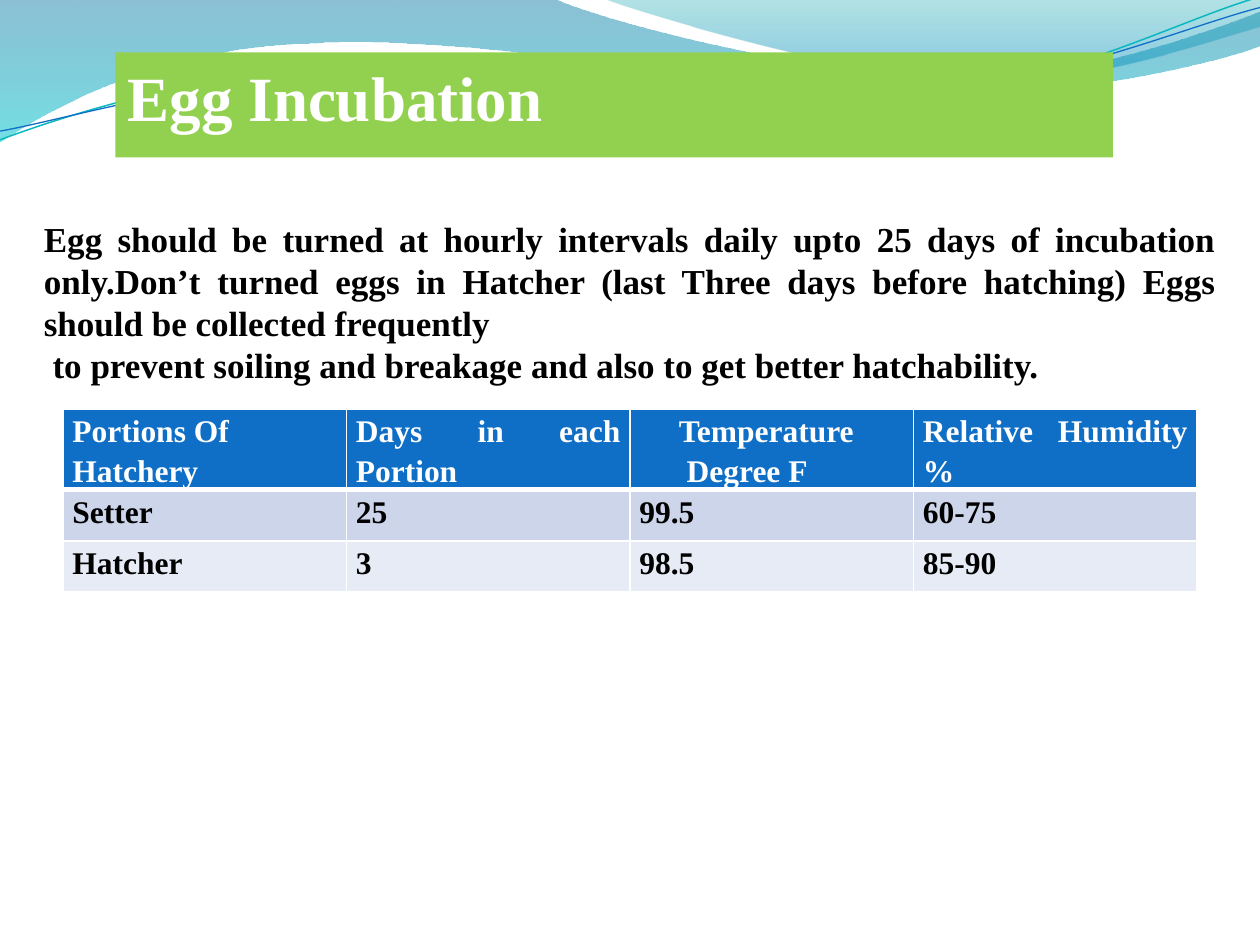
from lxml import etree
from pptx import Presentation
from pptx.dml.color import RGBColor
from pptx.enum.shapes import MSO_SHAPE
from pptx.enum.text import MSO_ANCHOR, PP_ALIGN
from pptx.oxml.ns import qn
from pptx.util import Pt

FONT = "Times New Roman"

# Wave outlines in points: pairs are corners, sextuples are Bezier curves
BAND = [(0, 0), (316.8, -0.7), (342.7, 12.2, 478.1, 45.4, 545.8, 45.4),
        (614.2, 45.4, 689.8, 18.7, 720, 6.5), (720.7, 25.9),
        (707.8, 31.7, 626.4, 54.7, 537.1, 54), (447.8, 54, 275, 20.2, 185, 24.5),
        (92.9, 25.9, 33.1, 59.8, -0.7, 81.4)]
CREST = [(344.9, -0.7), (366.5, 7.9, 491, 44.6, 553.7, 46.8),
         (616.3, 49.7, 691.9, 23, 720, 15.1), (720, 0)]
TEAL_LINE = [(0, 79.9), (34.6, 67, 113.8, 41, 199.4, 37.4),
             (284.4, 33.8, 427, 64.1, 513.4, 57.6),
             (599.8, 51.1, 675.4, 10.8, 718.6, -1.4)]
BLUE_LINE = [(0, 74.9), (33.8, 69.1, 118.1, 43.9, 203.8, 40.3),
             (290.2, 36.7, 429.8, 60.5, 516.2, 54),
             (601.9, 48.2, 677.5, 15.1, 720, 4.3)]

BODY = ("Egg should be turned at hourly intervals daily upto 25 days of incubation "
        "only.Don’t turned eggs in Hatcher (last Three days before hatching) Eggs "
        "should be collected frequently\n"
        " to prevent soiling and breakage and also to get better hatchability.")
ROWS = [["Portions Of\nHatchery", "Days in each Portion",
         "Temperature\nDegree F", "Relative Humidity %"],
        ["Setter", "25", "99.5", "60-75"],
        ["Hatcher", "3", "98.5", "85-90"]]
ROW_FILLS = ["0F6FC6", "CCD5EA", "E7EBF5"]
TEMPERATURE_INDENTS = [22.5, 27]


def color(value):
    return RGBColor.from_string(value)


def style_text(text_frame, size, text_color, alignment, line_spacing=None):
    for paragraph in text_frame.paragraphs:
        paragraph.alignment = alignment
        paragraph.line_spacing = line_spacing
        for run in paragraph.runs:
            run.font.name = FONT
            run.font.size = Pt(size)
            run.font.bold = True
            run.font.color.rgb = color(text_color)


def add_outline(slide, left, top, outline, close):
    points = [(Pt(left + segment[i]), Pt(top + segment[i + 1]))
              for segment in outline for i in range(0, len(segment), 2)]
    builder = slide.shapes.build_freeform(*points[0])
    builder.add_line_segments(points[1:], close=close)
    shape = builder.convert_to_shape()
    shape.shadow.inherit = False
    # Join the three points of each curve into one Bezier segment
    lines = iter(list(shape._element.iter(qn("a:lnTo"))))
    for segment in outline[1:]:
        first = next(lines)
        if len(segment) == 6:
            curve = etree.Element(qn("a:cubicBezTo"))
            first.addprevious(curve)
            for line in (first, next(lines), next(lines)):
                curve.append(line[0])
                line.getparent().remove(line)
    return shape


def add_waves(slide, left, top):
    # Translucent gradient waves: color and opacity at the top, then the bottom
    for outline, stops, end in [
            (BAND, [("0074A1", 45), ("00C6CF", 55)], 1),
            (CREST, [("00A1A9", 30), ("008BBF", 45)], 0.8)]:
        shape = add_outline(slide, left, top, outline, True)
        shape.line.fill.background()
        shape.fill.gradient()
        shape.fill.gradient_angle = 270
        for stop, position, (value, opacity) in zip(shape.fill.gradient_stops, (0, end), stops):
            stop.position = position
            stop.color.rgb = color(value)
        nodes = shape.fill._xPr.iter(qn("a:srgbClr"))
        for node, (value, opacity) in zip(nodes, stops):
            etree.SubElement(node, qn("a:alpha")).set("val", str(opacity * 1000))
    # Thin lines
    for outline, value, width in [(TEAL_LINE, "0AB8BF", 0.85), (BLUE_LINE, "0F6FC6", 0.75)]:
        shape = add_outline(slide, left, top, outline, False)
        shape.fill.background()
        shape.line.color.rgb = color(value)
        shape.line.width = Pt(width)


def set_borders(cell, bottom_width):
    properties = cell._tc.get_or_add_tcPr()
    sides = [("a:lnL", 1), ("a:lnR", 1), ("a:lnT", 1), ("a:lnB", bottom_width)]
    for index, (side, width) in enumerate(sides):
        line = etree.Element(qn(side), w=str(Pt(width)))
        fill = etree.SubElement(line, qn("a:solidFill"))
        etree.SubElement(fill, qn("a:srgbClr"), val="FFFFFF")
        properties.insert(index, line)


def add_hatchery_table(slide, left, top, width, height):
    table = slide.shapes.add_table(len(ROWS), len(ROWS[0]), Pt(left), Pt(top),
                                   Pt(width), Pt(height)).table
    for row_index, texts in enumerate(ROWS):
        is_header = row_index == 0
        for column_index, text in enumerate(texts):
            cell = table.cell(row_index, column_index)
            cell.margin_left = cell.margin_right = Pt(5.4)
            cell.margin_top = cell.margin_bottom = 0
            cell.fill.solid()
            cell.fill.fore_color.rgb = color(ROW_FILLS[row_index])
            cell.text_frame.text = text
            style_text(cell.text_frame, 18, "FFFFFF" if is_header else "000000",
                       PP_ALIGN.JUSTIFY, 1.15)
            set_borders(cell, 3 if is_header else 1)
    # Stagger the temperature heading
    for paragraph, indent in zip(table.cell(0, 2).text_frame.paragraphs, TEMPERATURE_INDENTS):
        paragraph._p.get_or_add_pPr().set("marL", str(Pt(indent)))


def add_body(slide, left, top, width, height):
    text_frame = slide.shapes.add_textbox(Pt(left), Pt(top), Pt(width), Pt(height)).text_frame
    text_frame.word_wrap = True
    text_frame.vertical_anchor = MSO_ANCHOR.MIDDLE
    text_frame.text = BODY
    style_text(text_frame, 20, "000000", PP_ALIGN.JUSTIFY)


def add_title(slide, left, top, width, height):
    shape = slide.shapes.add_shape(MSO_SHAPE.RECTANGLE, Pt(left), Pt(top), Pt(width), Pt(height))
    shape.shadow.inherit = False
    shape.fill.solid()
    shape.fill.fore_color.rgb = color("92D050")
    shape.line.fill.background()
    text_frame = shape.text_frame
    text_frame.vertical_anchor = MSO_ANCHOR.TOP
    text_frame.text = "Egg Incubation"
    style_text(text_frame, 36, "FFFFFF", PP_ALIGN.LEFT)


def main():
    presentation = Presentation()
    presentation.slide_width, presentation.slide_height = Pt(720), Pt(540)
    slide = presentation.slides.add_slide(presentation.slide_layouts[6])
    add_waves(slide, 0, 0)
    add_hatchery_table(slide, 36, 234, 648, 87.6)
    add_body(slide, 18, 120, 684, 104.5)
    add_title(slide, 66, 30, 570, 60)
    presentation.save("out.pptx")


if __name__ == "__main__":
    main()
